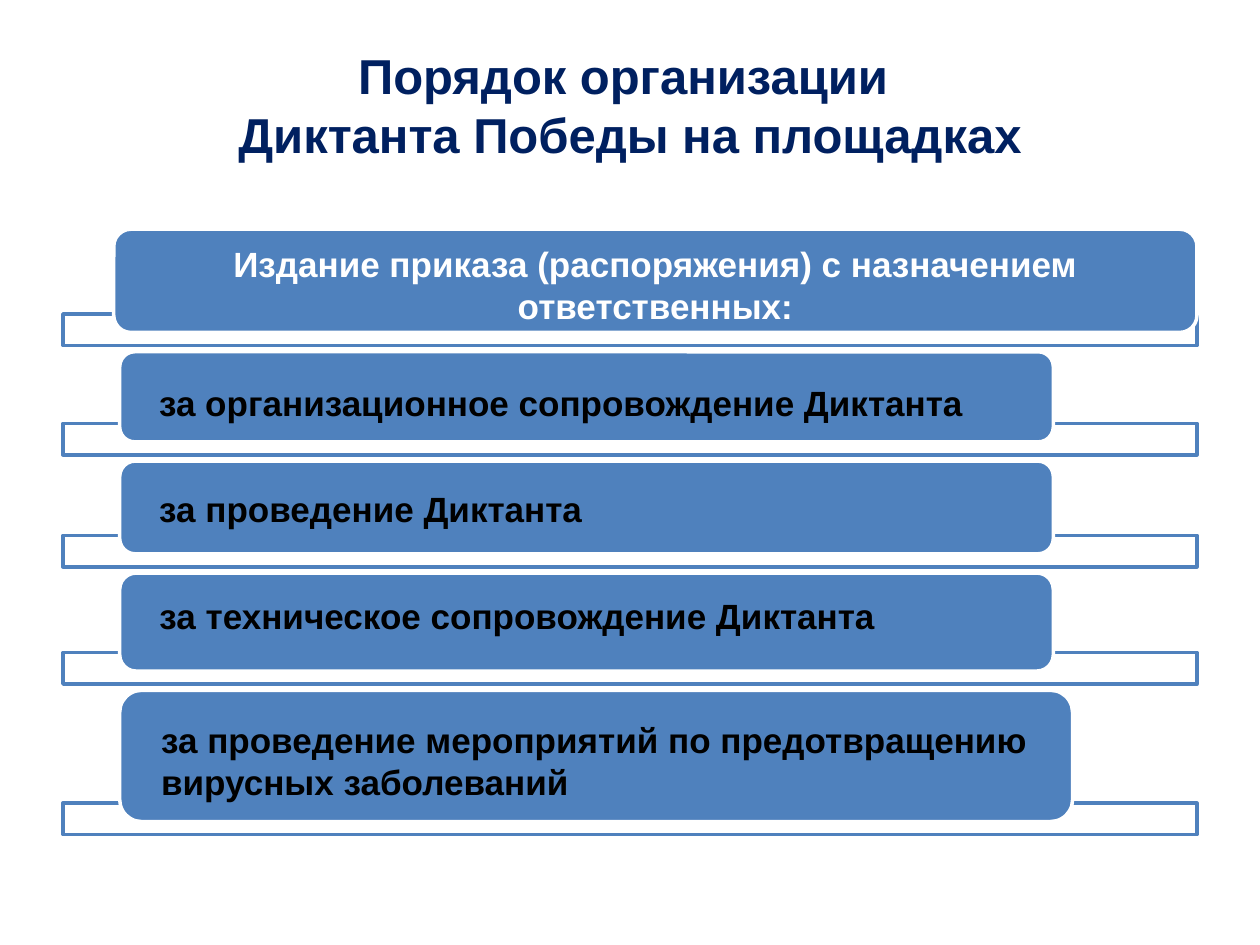
from pptx import Presentation
from pptx.dml.color import RGBColor
from pptx.enum.shapes import MSO_SHAPE
from pptx.enum.text import MSO_ANCHOR, PP_ALIGN
from pptx.util import Pt

NAVY = RGBColor(0x00, 0x20, 0x60)
BLUE = RGBColor(0x4F, 0x81, 0xBD)
WHITE = RGBColor(0xFF, 0xFF, 0xFF)
BLACK = RGBColor(0x00, 0x00, 0x00)

BAR_HEIGHT = 18
BAR_OVERLAP = 10.6  # how far each label reaches down over its bar
ROW_GAP = 3.6

# text, indent, width, height, text shift, colour, alignment
ROWS = [
    ("Издание приказа (распоряжения) с назначением ответственных:",
     29, 619, 59, 2.2, WHITE, PP_ALIGN.CENTER),
    ("за организационное сопровождение Диктанта",
     32.4, 533.5, 51.5, 3, BLACK, PP_ALIGN.LEFT),
    ("за проведение Диктанта",
     32.4, 533.5, 53, 0.7, BLACK, PP_ALIGN.LEFT),
    ("за техническое сопровождение Диктанта",
     32.4, 533.5, 56, -4, BLACK, PP_ALIGN.LEFT),
    ("за проведение мероприятий по предотвращению вирусных заболеваний",
     32.4, 544.5, 75, 2.5, BLACK, PP_ALIGN.LEFT),
]


def format_paragraph(p, size, color, align):
    p.alignment = align
    for r in p.runs:
        r.font.name = "Arial"
        r.font.size = Pt(size)
        r.font.bold = True
        r.font.color.rgb = color


def add_box(s, kind, left, top, width, height, fill, line):
    sp = s.shapes.add_shape(kind, Pt(left), Pt(top), Pt(width), Pt(height))
    sp.shadow.inherit = False
    sp.fill.solid()
    sp.fill.fore_color.rgb = fill
    sp.line.color.rgb = line
    sp.line.width = Pt(2)
    return sp


def add_title(s, left, top, width, height):
    sp = s.shapes.add_textbox(Pt(left), Pt(top), Pt(width), Pt(height))
    tf = sp.text_frame
    tf.word_wrap = True
    tf.vertical_anchor = MSO_ANCHOR.MIDDLE
    tf.margin_top, tf.margin_bottom = 0, Pt(14)
    tf.text = "Порядок организации \nДиктанта Победы на площадках"
    for p in tf.paragraphs:
        p.line_spacing = Pt(33.7)
        format_paragraph(p, 28, NAVY, PP_ALIGN.CENTER)


def add_list(s, left, top, width):
    for text, indent, label_width, height, shift, color, align in ROWS:
        # Outlined bar behind the label
        bar_top = top + height - BAR_OVERLAP
        add_box(s, MSO_SHAPE.RECTANGLE, left, bar_top, width, BAR_HEIGHT,
                WHITE, BLUE)

        # Rounded label
        sp = add_box(s, MSO_SHAPE.ROUNDED_RECTANGLE, left + indent, top,
                     label_width, height, BLUE, WHITE)
        tf = sp.text_frame
        tf.word_wrap = True
        tf.vertical_anchor = MSO_ANCHOR.MIDDLE
        tf.margin_left = tf.margin_right = Pt(20)
        tf.margin_top = Pt(max(2 * shift, 0))
        tf.margin_bottom = Pt(max(-2 * shift, 0))
        tf.text = text
        format_paragraph(tf.paragraphs[0], 20, color, align)

        top = bar_top + BAR_HEIGHT + ROW_GAP


def main():
    prs = Presentation()
    prs.slide_width, prs.slide_height = Pt(720), Pt(540)
    s = prs.slides.add_slide(prs.slide_layouts[6])
    add_title(s, 36, 21.6, 648, 90)
    add_list(s, 36, 131, 648)
    prs.save("out.pptx")


if __name__ == "__main__":
    main()
